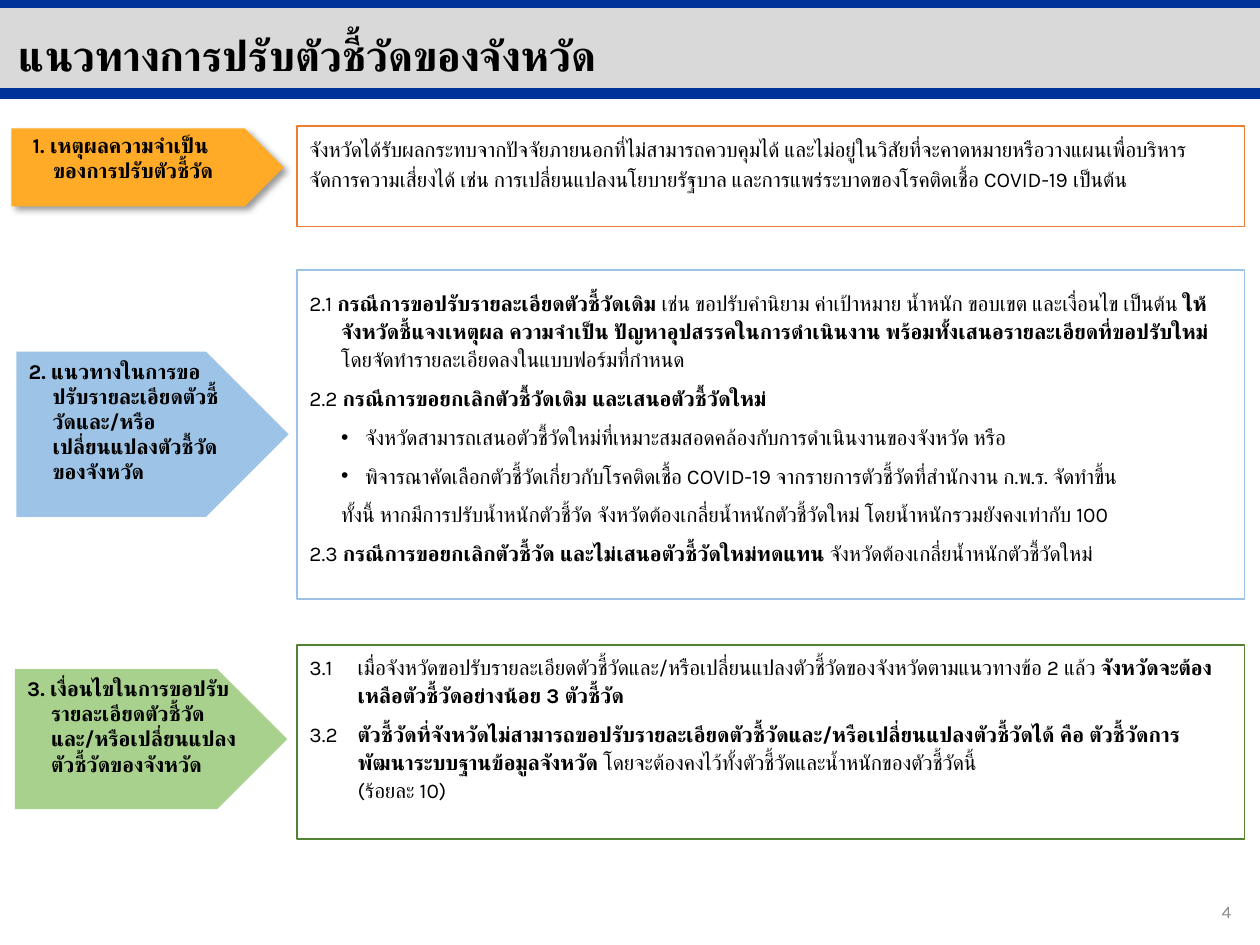
import dataclasses
import typing

import pptx
import pptx.dml.color
import pptx.enum.shapes
import pptx.enum.text
import pptx.oxml
import pptx.oxml.ns
import pptx.util

Cm = pptx.util.Cm
Pt = pptx.util.Pt
Shapes = pptx.enum.shapes.MSO_SHAPE
Align = pptx.enum.text.PP_ALIGN
Anchor = pptx.enum.text.MSO_ANCHOR
FONT = "Karla"
BLACK = "000000"
ARROW_WIDTH = 5.49
PANEL_LEFT, PANEL_WIDTH = 5.99, 19.1


@dataclasses.dataclass
class Line:
    """One paragraph; text between asterisks is bold, lengths are in cm."""
    text: str
    margin: float = 0
    indent: float = 0
    before: float = 0
    spacing: typing.Any = None
    bullet: bool = False
    tab: float = 0
    size: float = 12
    color: str = BLACK
    align: typing.Any = Align.LEFT


@dataclasses.dataclass
class Step:
    color: str
    border: str
    arrow_left: float
    arrow_top: float
    arrow_height: float
    label: Line
    panel_top: float
    panel_height: float
    lines: list[Line]
    label_inset: tuple[float, float] = (0.25, 0.13)
    panel_inset: float = 0.13
    shadow: bool = False


def rgb(color: str):
    return pptx.dml.color.RGBColor.from_string(color)


def add_xml(parent, tag: str, **attributes: str):
    child = pptx.oxml.parse_xml(f"<{tag} {pptx.oxml.ns.nsdecls('a')}/>")
    for name, value in attributes.items():
        child.set(name, value)
    parent.append(child)
    return child


def write(shape, lines: list[Line], inset=(0.25, 0.13), anchor=Anchor.TOP) -> None:
    frame = shape.text_frame
    frame.word_wrap = True
    frame.vertical_anchor = anchor
    frame.margin_left, frame.margin_top = Cm(inset[0]), Cm(inset[1])
    frame.margin_right, frame.margin_bottom = Cm(0.25), Cm(0.13)
    for index, line in enumerate(lines):
        para = frame.add_paragraph() if index else frame.paragraphs[0]
        para.text = line.text.replace("*", "")
        para.alignment = line.align
        para.space_before = Pt(line.before if index else 0)
        para.line_spacing = line.spacing
        properties = para._p.get_or_add_pPr()
        properties.set("marL", str(Cm(line.margin)))
        properties.set("indent", str(Cm(line.indent)))
        if line.bullet:
            add_xml(properties, "a:buFont", typeface="Arial")
            add_xml(properties, "a:buChar", char="•")
        if line.tab:
            stops = add_xml(properties, "a:tabLst")
            add_xml(stops, "a:tab", pos=str(Cm(line.tab)), algn="l")
        write_spans(para, line)


def write_spans(para, line: Line) -> None:
    """Rebuild the paragraph as alternating regular and bold runs."""
    para.clear()
    for index, text in enumerate(line.text.split("*")):
        for row, part in enumerate(text.split("\n")):
            if row:
                para.add_line_break()
            if not part:
                continue
            span = para.add_run()
            span.text = part
            span.font.size = Pt(line.size)
            span.font.bold = index % 2 == 1
            span.font.name = FONT
            span.font.color.rgb = rgb(line.color)
            add_xml(span._r.get_or_add_rPr(), "a:cs", typeface=FONT)


def add_block(page, kind, left, top, width, height, fill=None, border=None, weight=1.0):
    block = page.shapes.add_shape(kind, Cm(left), Cm(top), Cm(width), Cm(height))
    block.shadow.inherit = False
    if fill:
        block.fill.solid()
        block.fill.fore_color.rgb = rgb(fill)
    else:
        block.fill.background()
    if border:
        block.line.color.rgb = rgb(border)
        block.line.width = Pt(weight)
    else:
        block.line.fill.background()
    return block


def add_shadow(shape) -> None:
    effects = shape._element.spPr.find(pptx.oxml.ns.qn("a:effectLst"))
    outer = add_xml(effects, "a:outerShdw", blurRad=str(Pt(4)), dist=str(Pt(3)),
                    dir="2700000", algn="tl", rotWithShape="0")
    color = add_xml(outer, "a:srgbClr", val=BLACK)
    add_xml(color, "a:alpha", val="40000")


def add_rule(page, top: float) -> None:
    rule = page.shapes.add_connector(
        pptx.enum.shapes.MSO_CONNECTOR.STRAIGHT, 0, Cm(top), Cm(25.4), Cm(top))
    rule.line.color.rgb = rgb("003399")
    rule.line.width = Pt(6)
    add_xml(rule._element.spPr, "a:effectLst")


def add_text(page, left, top, width, height, line: Line, anchor=Anchor.TOP) -> None:
    box = page.shapes.add_textbox(Cm(left), Cm(top), Cm(width), Cm(height))
    write(box, [line], anchor=anchor)


def add_step(page, step: Step) -> None:
    arrow = add_block(page, Shapes.PENTAGON, step.arrow_left, step.arrow_top,
                      ARROW_WIDTH, step.arrow_height, step.color)
    if step.shadow:
        add_shadow(arrow)
    write(arrow, [step.label], step.label_inset)
    panel = add_block(page, Shapes.RECTANGLE, PANEL_LEFT, step.panel_top,
                      PANEL_WIDTH, step.panel_height, "FFFFFF", step.border)
    write(panel, step.lines, (0.25, step.panel_inset))


def case(text: str, margin=0.64, indent=-0.64, **options) -> Line:
    return Line(text, margin, indent, 6, 1.12, **options)


STEPS = [
    Step("FFAB27", "ED7D31", 0.23, 2.59, 1.57,
         Line("*1. เหตุผลความจำเป็น\nของการปรับตัวชี้วัด*", 0.41, -0.41), 2.54, 2.03,
         [Line("จังหวัดได้รับผลกระทบจากปัจจัยภายนอกที่ไม่สามารถควบคุมได้ และไม่อยู่ในวิสัยที่จะคาดหมายหรือวางแผนเพื่อบริหารจัดการความเสี่ยงได้ เช่น การเปลี่ยนแปลงนโยบายรัฐบาล และการแพร่ระบาดของโรคติดเชื้อ COVID-19 เป็นต้น",
               spacing=Pt(17))],
         label_inset=(0.43, 0.08), shadow=True),
    Step("9DC3E6", "9DC3E6", 0.33, 7.09, 3.33,
         Line("*2. แนวทางในการขอปรับรายละเอียดตัวชี้วัดและ/หรือเปลี่ยนแปลงตัวชี้วัดของจังหวัด*", 0.48, -0.48),
         5.44, 6.63,
         [case("2.1 *กรณีการขอปรับรายละเอียดตัวชี้วัดเดิม *เช่น ขอปรับคำนิยาม ค่าเป้าหมาย น้ำหนัก ขอบเขต และเงื่อนไข เป็นต้น *ให้จังหวัดชี้แจงเหตุผล ความจำเป็น ปัญหาอุปสรรคในการดำเนินงาน พร้อมทั้งเสนอรายละเอียดที่ขอปรับใหม่ *โดยจัดทำรายละเอียดลงในแบบฟอร์มที่กำหนด"),
          case("2.2 *กรณีการขอยกเลิกตัวชี้วัดเดิม และเสนอตัวชี้วัดใหม่*"),
          case("จังหวัดสามารถเสนอตัวชี้วัดใหม่ที่เหมาะสมสอดคล้องกับการดำเนินงานของจังหวัด หรือ",
               1.12, -0.48, bullet=True),
          case("พิจารณาคัดเลือกตัวชี้วัดเกี่ยวกับโรคติดเชื้อ COVID-19 จากรายการตัวชี้วัดที่สำนักงาน ก.พ.ร. จัดทำขึ้น",
               1.12, -0.48, bullet=True),
          case("ทั้งนี้ หากมีการปรับน้ำหนักตัวชี้วัด จังหวัดต้องเกลี่ยน้ำหนักตัวชี้วัดใหม่ โดยน้ำหนักรวมยังคงเท่ากับ 100",
               indent=0),
          case("2.3 *กรณีการขอยกเลิกตัวชี้วัด และไม่เสนอตัวชี้วัดใหม่ทดแทน *จังหวัดต้องเกลี่ยน้ำหนักตัวชี้วัดใหม่")],
         panel_inset=0.36),
    Step("A9D18E", "548235", 0.3, 13.49, 2.82,
         Line("*3. เงื่อนไขในการขอปรับรายละเอียดตัวชี้วัดและ/หรือเปลี่ยนแปลงตัวชี้วัดของจังหวัด*", 0.48, -0.48),
         13, 3.91,
         [case("3.1\tเมื่อจังหวัดขอปรับรายละเอียดตัวชี้วัดและ/หรือเปลี่ยนแปลงตัวชี้วัดของจังหวัดตามแนวทางข้อ 2 แล้ว *จังหวัดจะต้องเหลือตัวชี้วัดอย่างน้อย 3 ตัวชี้วัด*",
               0.97, -0.97, tab=0.76),
          case("3.2\t*ตัวชี้วัดที่จังหวัดไม่สามารถขอปรับรายละเอียดตัวชี้วัดและ/หรือเปลี่ยนแปลงตัวชี้วัดได้ คือ ตัวชี้วัดการพัฒนาระบบฐานข้อมูลจังหวัด *โดยจะต้องคงไว้ทั้งตัวชี้วัดและน้ำหนักของตัวชี้วัดนี้\n(ร้อยละ 10)",
               0.97, -0.97, tab=0.76)]),
]


def main() -> None:
    deck = pptx.Presentation()
    deck.slide_width, deck.slide_height = Cm(25.4), Cm(19.05)
    page = deck.slides.add_slide(deck.slide_layouts[6])
    add_block(page, Shapes.RECTANGLE, 0, 0.13, 25.4, 1.73, "D9D9D9")
    for top in (1.88, 0.05):
        add_rule(page, top)
    add_text(page, 0.13, 0.46, 19.28, 1.27,
             Line("*แนวทางการปรับตัวชี้วัดของจังหวัด*", size=24))
    for step in STEPS:
        add_step(page, step)
    add_text(page, 19.35, 17.86, 5.72, 1.02,
             Line("4", size=10, color="8C8C8C", align=Align.RIGHT), Anchor.MIDDLE)
    deck.save("out.pptx")


if __name__ == "__main__":
    main()
